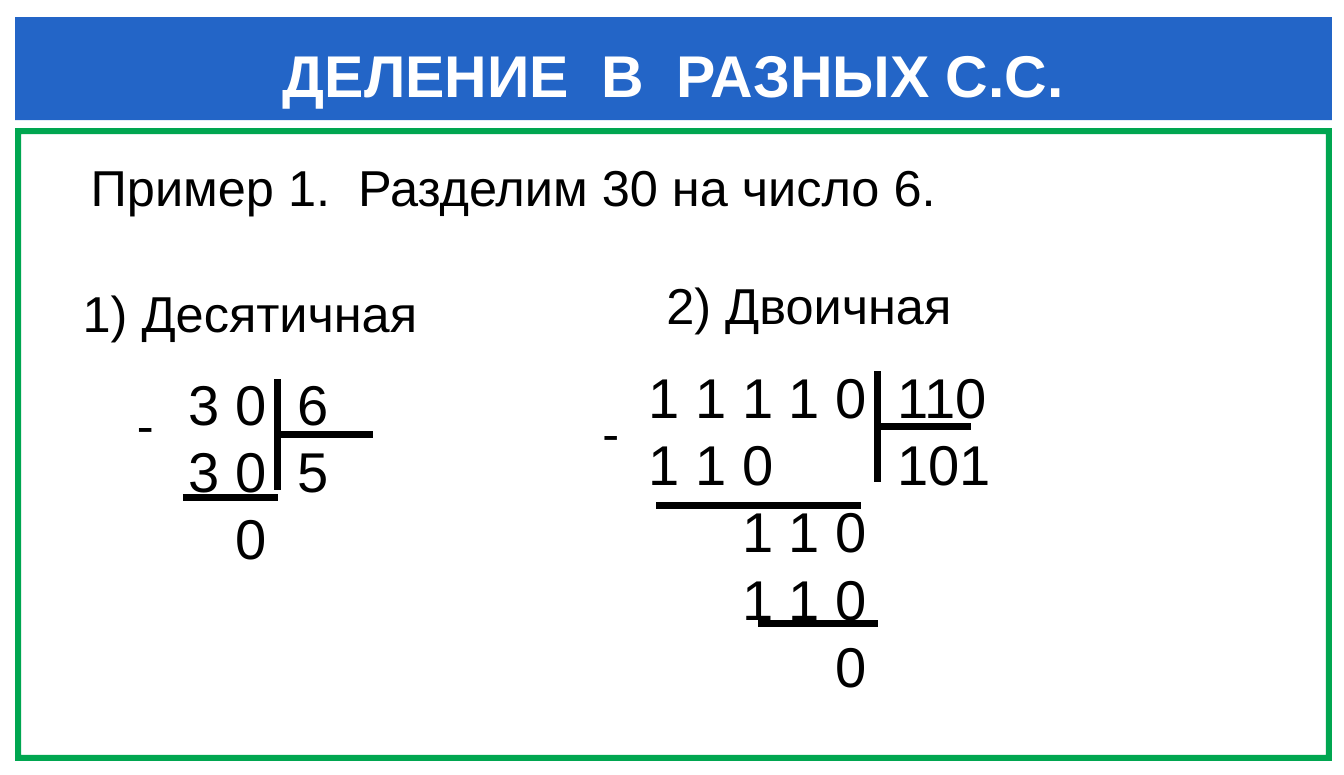
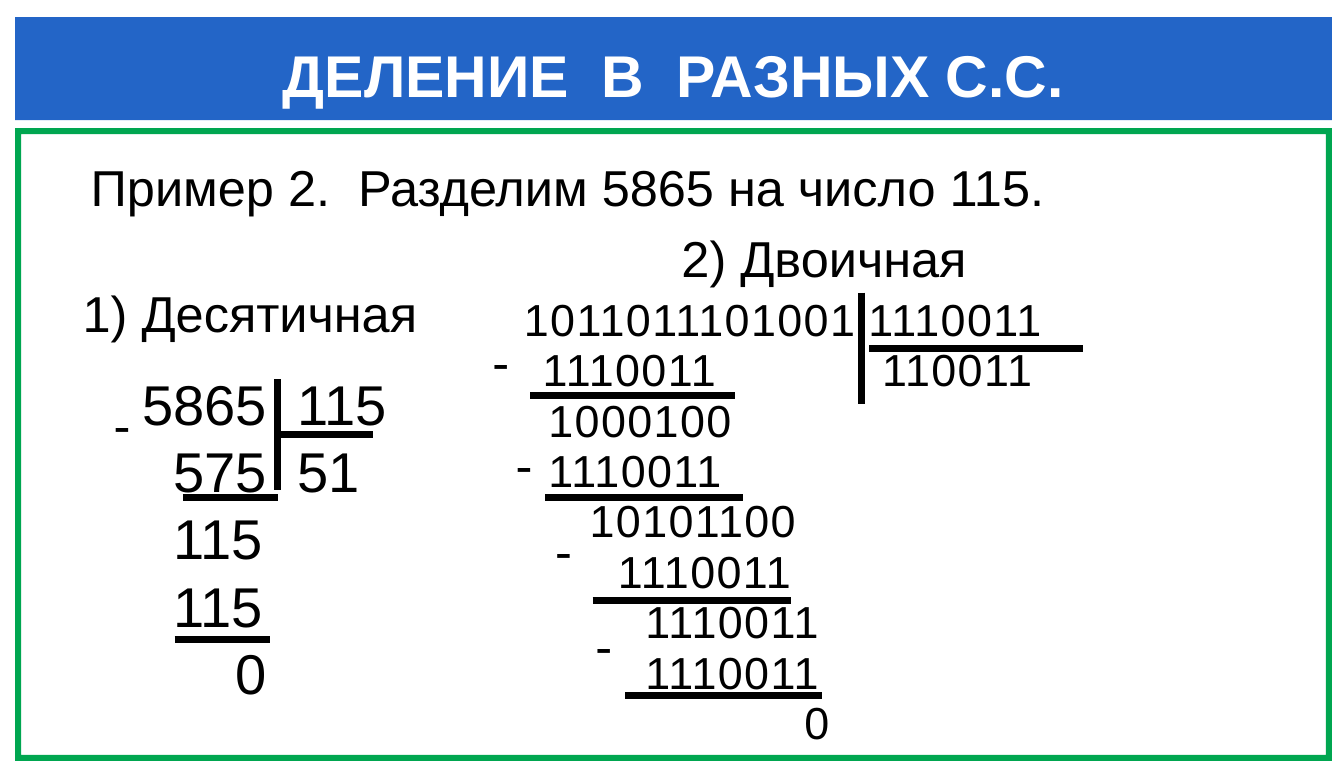
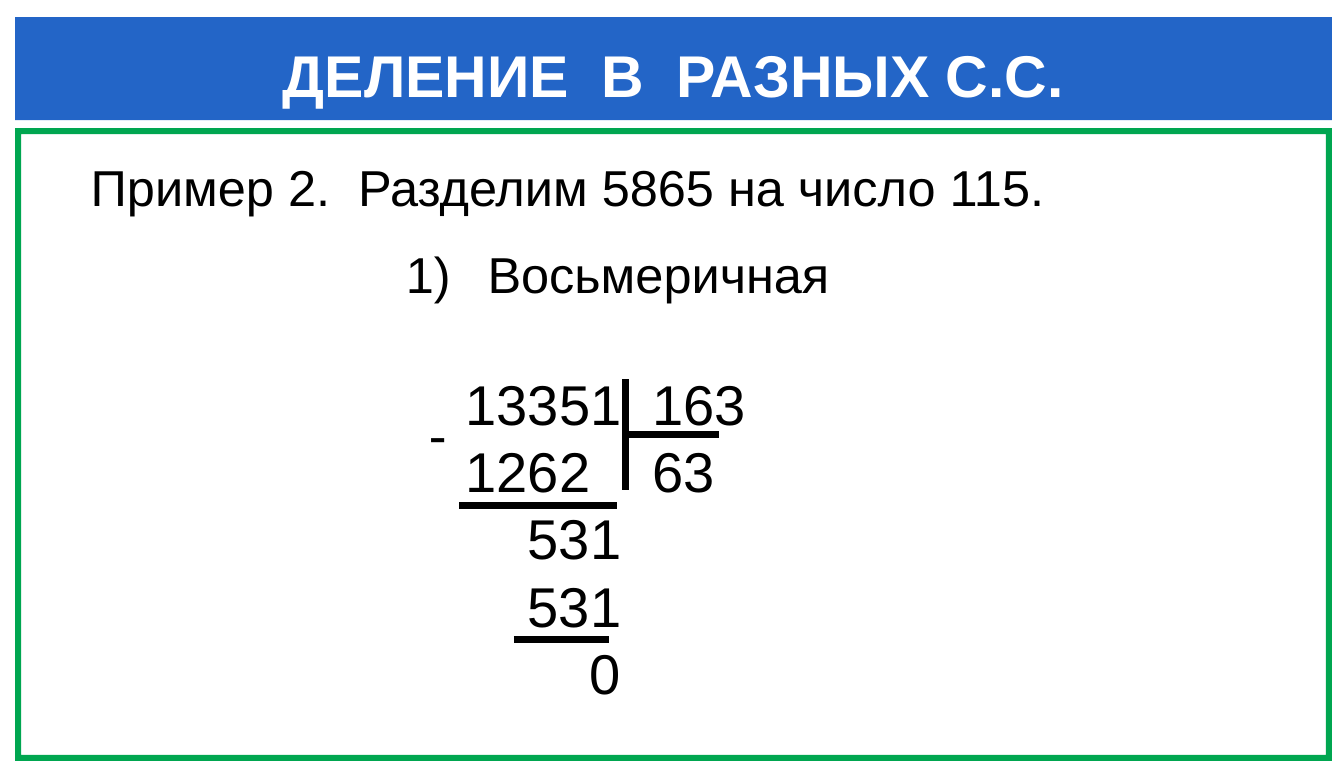
import pptx
import pptx.dml.color
import pptx.enum.shapes
import pptx.enum.text
import pptx.oxml.ns
import pptx.util
from lxml import etree
from pptx.util import Inches

BLACK = "000000"
WHITE = "FFFFFF"
BAND_BLUE = "2365C7"
FRAME_GREEN = "00A650"
TITLE = "ДЕЛЕНИЕ  В  РАЗНЫХ С.С."
SLIDE_WIDTH = pptx.util.Emu(12169775)
SLIDE_HEIGHT = pptx.util.Emu(7021513)
WIDE_COLUMN = 0.154
NARROW_COLUMN = 0.124


def color(value):
    return pptx.dml.color.RGBColor.from_string(value)


def add_child(parent, tag, **attributes):
    child = etree.SubElement(parent, pptx.oxml.ns.qn(tag))
    for name, value in attributes.items():
        child.set(name, str(value))
    return child


def style(paragraph, size, font="Arial", fill=BLACK, bold=False):
    paragraph.font.name = font
    paragraph.font.size = pptx.util.Pt(size)
    paragraph.font.color.rgb = color(fill)
    paragraph.font.bold = bold


def set_indent(paragraph, left, first=0):
    properties = paragraph._p.get_or_add_pPr()
    properties.set("marL", str(Inches(left)))
    properties.set("indent", str(Inches(first)))
    return properties


def add_block(slide, kind, left, top, width, height, fill):
    shape = slide.shapes.add_shape(
        kind, Inches(left), Inches(top), Inches(width), Inches(height))
    shape.shadow.inherit = False
    shape.fill.solid()
    shape.fill.fore_color.rgb = color(fill)
    shape.line.fill.background()
    return shape


def add_box(slide, left, top, width, height):
    shape = slide.shapes.add_textbox(
        Inches(left), Inches(top), Inches(width), Inches(height))
    shape.text_frame.word_wrap = True
    return shape.text_frame


def add_text(slide, text, left, top, width, height=0.71, size=36, font="Arial"):
    paragraph = add_box(slide, left, top, width, height).paragraphs[0]
    paragraph.text = text
    style(paragraph, size, font)
    return paragraph


def add_minus(slide, left, top, size=38):
    add_text(slide, "-", left, top, 0.42, 0.74, size, "Calibri")


def add_line(slide, left, top, right, bottom):
    line = slide.shapes.add_connector(
        pptx.enum.shapes.MSO_CONNECTOR.STRAIGHT,
        Inches(left), Inches(top), Inches(right), Inches(bottom))
    line.line.color.rgb = color(BLACK)
    line.line.width = pptx.util.Pt(5)
    add_child(line._element.spPr, "a:effectLst")


def add_rule(slide, left, right, top):
    add_line(slide, left, top, right, top)


def add_corner(slide, left, top, right, gap=0):
    add_rule(slide, left + gap, right, top + 0.55)
    add_line(slide, left, top, left, top + 1.1)


def add_working(slide, left, top, width, height, rows, column=WIDE_COLUMN,
                size=40, line_height=None, spacing=0):
    frame = add_box(slide, left, top, width, height)
    for index, row in enumerate(rows):
        paragraph = frame.paragraphs[0] if index == 0 else frame.add_paragraph()
        run = paragraph.add_run()
        run.text = "".join("\t" + number for _, number in row)
        style(paragraph, size)
        if line_height:
            paragraph.line_spacing = pptx.util.Pt(line_height)
        if spacing:
            run._r.get_or_add_rPr().set("spc", str(spacing))
        properties = paragraph._p.get_or_add_pPr()
        tabs = etree.Element(pptx.oxml.ns.qn("a:tabLst"))
        for position, _ in row:
            add_child(tabs, "a:tab", pos=Inches(position * column), algn="l")
        properties.find(pptx.oxml.ns.qn("a:defRPr")).addprevious(tabs)


def add_division_slide(presentation, example):
    slide = presentation.slides.add_slide(presentation.slide_layouts[6])
    kinds = pptx.enum.shapes.MSO_SHAPE
    frame = add_block(slide, kinds.FRAME, 0.15, 1.27, 13.04, 6.27, FRAME_GREEN)
    frame.adjustments[0] = 0.06 / 6.27
    add_block(slide, kinds.RECTANGLE, 0.15, 0.17, 13.04, 1.02, BAND_BLUE)
    title = add_box(slide, 0, 0.34, 13.31, 0.75)
    title.margin_left = title.margin_right = title.margin_bottom = 0
    title.margin_top = Inches(0.04)
    paragraph = title.paragraphs[0]
    paragraph.text = TITLE
    paragraph.alignment = pptx.enum.text.PP_ALIGN.CENTER
    paragraph.space_before = pptx.util.Pt(2.8)
    style(paragraph, 42, fill=WHITE, bold=True)
    set_indent(paragraph, 0.03)
    add_text(slide, example, 0.8, 1.5, 9.74)
    return slide


def add_decimal(slide, rows, height, minus_left):
    add_text(slide, "1) Десятичная", 0.72, 2.75, 3.69)
    add_working(slide, -1, 3.61, 5.63, height, rows)
    add_minus(slide, minus_left, 3.84)
    add_corner(slide, 2.75, 3.76, 3.69)
    add_rule(slide, 1.81, 2.75, 4.93)


def build_small_example(presentation):
    slide = add_division_slide(
        presentation, "Пример 1.  Разделим 30 на число 6.")
    add_decimal(slide, [
        [(18, "3 0"), (25, "6")],
        [(18, "3 0"), (25, "5")],
        [(21, "0")],
    ], 2.12, 1.26)
    add_text(slide, "2) Двоичная", 6.5, 2.67, 3.1)
    add_working(slide, 4.94, 3.54, 5.63, 4.14, [
        [(9, "1 1 1 1 0"), (25, "110")],
        [(9, "1 1 0"), (25, "101")],
        [(15, "1 1 0")],
        [(15, "1 1 0")],
        [(21, "0")],
    ])
    add_minus(slide, 5.87, 3.92)
    add_corner(slide, 8.69, 3.68, 9.62)
    add_rule(slide, 6.5, 8.53, 5.01)
    add_rule(slide, 7.51, 8.69, 6.18)


def build_large_example(presentation):
    slide = add_division_slide(
        presentation, "Пример 2.  Разделим 5865 на число 115.")
    add_decimal(slide, [
        [(15, "5865"), (25, "115")],
        [(17, "575"), (25, "51")],
        [(17, "115")],
        [(17, "115")],
        [(21, "0")],
    ], 3.47, 1.03)
    add_rule(slide, 1.73, 2.67, 6.34)
    add_text(slide, "2) Двоичная", 6.65, 2.2, 3.1)
    add_working(slide, 4.78, 2.87, 7.58, 5.32, [
        [(2.5, "1011011101001"), (30, "1110011")],
        [(4, "1110011"), (31.1, "110011")],
        [(4.45, "1000100")],
        [(4.45, "1110011")],
        [(7.75, "10101100")],
        [(10, "1110011")],
        [(12.2, "1110011")],
        [(12.2, "1110011")],
        [(24.9, "0")],
    ], NARROW_COLUMN, 32, 36, 100)
    add_corner(slide, 8.53, 2.9, 10.72, 0.08)
    for minus_left, minus_top, left, right, top in [
        (4.78, 3.21, 5.25, 7.28, 3.92),
        (5.01, 4.23, 5.4, 7.36, 4.93),
        (5.4, 5.09, 5.87, 7.83, 5.95),
        (5.8, 6.03, 6.19, 8.14, 6.89),
    ]:
        add_minus(slide, minus_left, minus_top)
        add_rule(slide, left, right, top)


def build_octal_example(presentation):
    slide = add_division_slide(
        presentation, "Пример 2.  Разделим 5865 на число 115.")
    heading = add_text(slide, "Восьмеричная", 3.92, 2.36, 4.44, 1.35)
    properties = set_indent(heading, 0.81, -0.81)
    bullet = etree.Element(pptx.oxml.ns.qn("a:buAutoNum"), type="arabicParenR")
    properties.find(pptx.oxml.ns.qn("a:defRPr")).addprevious(bullet)
    add_working(slide, 2.51, 3.61, 5.63, 3.47, [
        [(13, "13351"), (25, "163")],
        [(13, "1262"), (25, "63")],
        [(17, "531")],
        [(17, "531")],
        [(21, "0")],
    ])
    add_minus(slide, 4.15, 3.92, 40)
    add_corner(slide, 6.19, 3.76, 7.12)
    add_rule(slide, 4.55, 6.11, 5.01)
    add_rule(slide, 5.09, 6.03, 6.34)


def main():
    presentation = pptx.Presentation()
    presentation.slide_width = SLIDE_WIDTH
    presentation.slide_height = SLIDE_HEIGHT
    build_small_example(presentation)
    build_large_example(presentation)
    build_octal_example(presentation)
    presentation.save("out.pptx")


if __name__ == "__main__":
    main()
